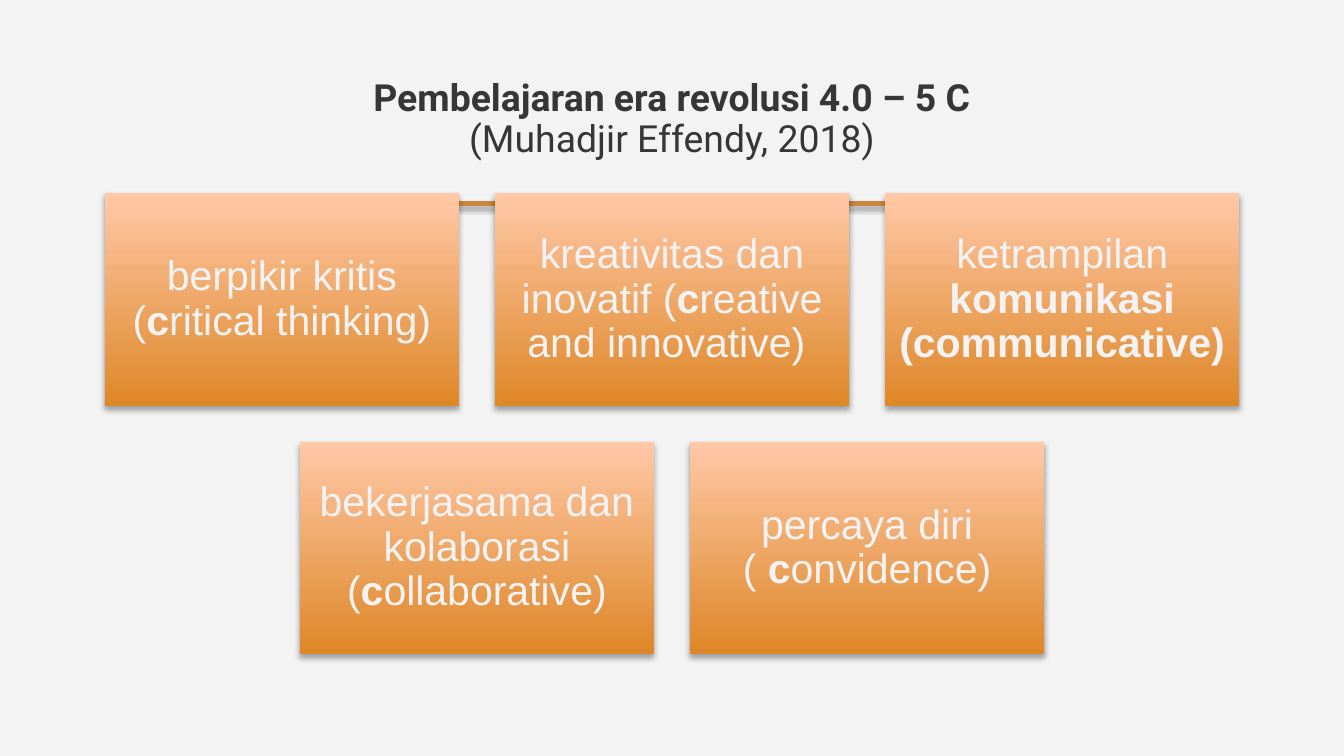
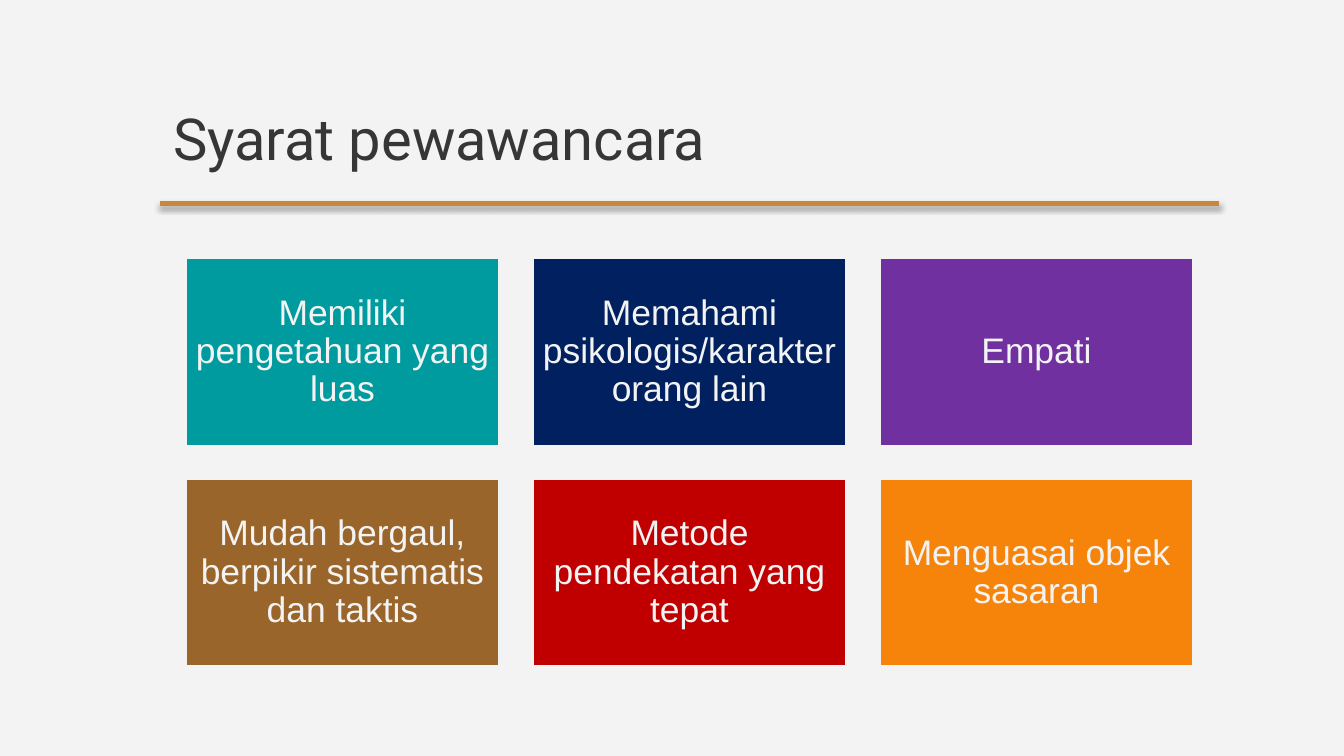
from lxml.etree import SubElement
from pptx import Presentation
from pptx.dml.color import RGBColor
from pptx.enum.shapes import MSO_CONNECTOR, MSO_SHAPE
from pptx.enum.text import MSO_ANCHOR, PP_ALIGN
from pptx.oxml.ns import qn
from pptx.util import Pt

PAPER, INK, RULE = "F3F3F3", "363636", "C9863C"
BOX_BOTTOM, BOX_TOP = "DE8727", "FFC8A7"

FIVE_C = [
    ["berpikir kritis (*c*ritical thinking)",
     "kreativitas dan inovatif (*c*reative and innovative) ",
     "ketrampilan *komunikasi (communicative)*"],
    ["bekerjasama dan kolaborasi (*c*ollaborative)",
     "percaya diri ( *c*onvidence)"],
]
REQUIREMENTS = [
    [("Memiliki pengetahuan yang luas", "009B9F"),
     ("Memahami psikologis/karakter orang lain", "002060"),
     ("Empati", "7030A0")],
    [("Mudah bergaul, berpikir sistematis dan taktis", "99652A"),
     ("Metode pendekatan yang tepat", "C00000"),
     ("Menguasai objek sasaran", "F7840A")],
]


def rgb(value):
    """Turn a hex string into a colour."""
    return RGBColor.from_string(value)


def add_shadow(s):
    """Give a shape or connector the soft downward shadow."""
    props = s._element.spPr
    effects = props.find(qn("a:effectLst"))
    if effects is None:
        effects = SubElement(props, qn("a:effectLst"))
    shadow = SubElement(effects, qn("a:outerShdw"), blurRad=str(Pt(3.1)),
                        dist=str(Pt(1.8)), dir="5400000", rotWithShape="0")
    black = SubElement(shadow, qn("a:srgbClr"), val="000000")
    SubElement(black, qn("a:alpha"), val="35000")


def write(tf, text, font="Arial", size=20, color=PAPER, align=PP_ALIGN.CENTER,
          anchor=MSO_ANCHOR.MIDDLE, spacing=0.9, inset=7.2):
    """Fill a text frame; asterisks switch bold on and off."""
    tf.word_wrap = True
    tf.vertical_anchor = anchor
    tf.margin_left = tf.margin_right = tf.margin_top = tf.margin_bottom = Pt(inset)
    p = tf.paragraphs[0]
    p.alignment, p.line_spacing = align, spacing
    for i, part in enumerate(text.split("*")):
        for j, line in enumerate(part.split("\n")):
            if j:
                p.add_line_break()
            if line:
                r = p.add_run()
                r.text = line
                r.font.name, r.font.size = font, Pt(size)
                r.font.bold = i % 2 == 1
                r.font.color.rgb = rgb(color)


def add_slide(prs):
    """Add a slide with the shared background and rule."""
    slide = prs.slides.add_slide(prs.slide_layouts[6])
    slide.background.fill.solid()
    slide.background.fill.fore_color.rgb = rgb(PAPER)
    s = slide.shapes.add_connector(MSO_CONNECTOR.STRAIGHT, Pt(85.7), Pt(109),
                                   Pt(653), Pt(109))
    s.line.color.rgb = rgb(RULE)
    s.line.width = Pt(2.5)
    add_shadow(s)
    return slide


def add_title(slide, text, left, top, width, height, **style):
    """Add a slide title."""
    s = slide.shapes.add_textbox(Pt(left), Pt(top), Pt(width), Pt(height))
    write(s.text_frame, text, font="Roboto", color=INK, anchor=MSO_ANCHOR.TOP, **style)


def add_box(slide, text, left, top, width, height, size, color=None):
    """Add a flat box, or a shaded one with a shadow when no colour is given."""
    s = slide.shapes.add_shape(MSO_SHAPE.RECTANGLE, Pt(left), Pt(top),
                               Pt(width), Pt(height))
    s.shadow.inherit = False
    if color:
        s.fill.solid()
        s.fill.fore_color.rgb = rgb(color)
        s.line.color.rgb = rgb(PAPER)
        s.line.width = Pt(2)
    else:
        s.fill.gradient()
        s.fill.gradient_angle = 90
        for stop, shade in zip(s.fill.gradient_stops, (BOX_BOTTOM, BOX_TOP)):
            stop.color.rgb = rgb(shade)
        s.line.fill.background()
        add_shadow(s)
    write(s.text_frame, text, size=size, inset=0.3 * size)


def add_box_rows(slide, rows, center, top, width, size):
    """Lay out centred rows of boxes with gaps of a tenth of their width."""
    height, gap = 0.6 * width, 0.1 * width
    for i, row in enumerate(rows):
        left = center - (len(row) * (width + gap) - gap) / 2
        for j, (text, color) in enumerate(row):
            add_box(slide, text, left + j * (width + gap), top + i * (height + gap),
                    width, height, size, color)


def main():
    """Build the two slides."""
    prs = Presentation()
    prs.slide_width, prs.slide_height = Pt(720), Pt(405)

    slide = add_slide(prs)
    add_title(slide, "*Pembelajaran era revolusi 4.0 – 5 C*\n(Muhadjir Effendy, 2018)",
              56, 35.5, 608, 45)
    rows = [[(text, None) for text in row] for row in FIVE_C]
    add_box_rows(slide, rows, center=360, top=103.6, width=190, size=22)

    slide = add_slide(prs)
    add_title(slide, "Syarat pewawancara", 85.7, 47.5, 567.3, 62, size=31,
              align=PP_ALIGN.LEFT, spacing=1.0)
    add_box_rows(slide, REQUIREMENTS, center=369.4, top=137.8, width=169, size=19)

    prs.save("out.pptx")


if __name__ == "__main__":
    main()
